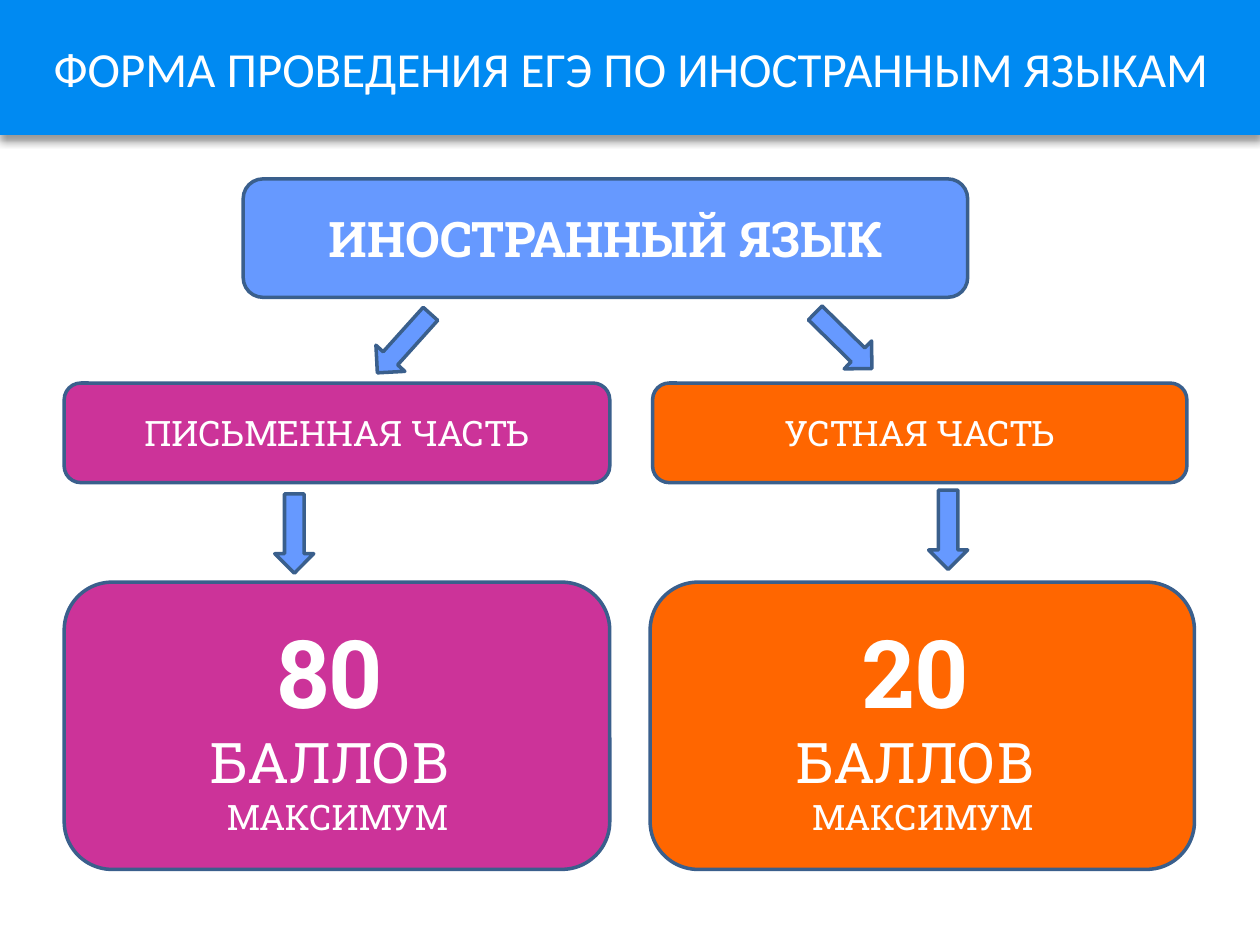
from lxml.etree import SubElement
from pptx import Presentation
from pptx.dml.color import RGBColor
from pptx.enum.shapes import MSO_SHAPE as Shape
from pptx.enum.text import MSO_ANCHOR as Anchor, MSO_AUTO_SIZE as AutoSize, PP_ALIGN as Align
from pptx.oxml.ns import qn
from pptx.util import Inches, Pt

THEME = {
    "banner": "008AF2", "blue": "6699FF", "pink": "CC3399", "orange": "FF6600",
    "outline": "3A5F8C", "text": "FFFFFF", "shadow": "000000",
    "title_font": "Calibri", "body_font": "Roboto Slab",
    "heading": 28, "label": 20, "score": 54, "unit": 32, "line_width": 2,
}

TITLE = "ФОРМА ПРОВЕДЕНИЯ ЕГЭ ПО ИНОСТРАННЫМ ЯЗЫКАМ"
SUBJECT = "ИНОСТРАННЫЙ ЯЗЫК"
# Each part: name, points, colour, (left, width) of its label and of its score box
PARTS = [
    ("ПИСЬМЕННАЯ ЧАСТЬ", "80", "pink", (0.51, 4.33), (0.51, 4.33)),
    ("УСТНАЯ ЧАСТЬ", "20", "orange", (5.18, 4.24), (5.16, 4.32)),
]
LABEL_ROW = (3.04, 0.79)  # top, height
SCORE_ROW = (4.62, 2.28)
ARROW_SIZE = (0.63, 0.31)
# Arrows: left, top, rotation
ARROWS = [(6.38, 2.55, 44.5), (7.21, 4.05, 90), (2.02, 4.08, 90), (2.89, 2.57, 132)]


def color(name):
    return RGBColor.from_string(THEME[name])


def place(shape, left, top, width, height):
    shape.left, shape.top = Inches(left), Inches(top)
    shape.width, shape.height = Inches(width), Inches(height)


def add_run(paragraph, text, *, size="label", font="body_font", bold=False):
    run = paragraph.add_run()
    run.text = text
    run.font.name = THEME[font]
    run.font.size = Pt(THEME[size])
    run.font.bold = bold
    run.font.color.rgb = color("text")


def write(shape, lines, **text_format):
    """Write lines, each a list of (text, format) runs, centred in the shape."""
    frame = shape.text_frame
    frame.word_wrap = True
    frame.auto_size = AutoSize.NONE
    frame.vertical_anchor = Anchor.MIDDLE
    for index, runs in enumerate(lines):
        paragraph = frame.add_paragraph() if index else frame.paragraphs[0]
        paragraph.alignment = Align.CENTER
        for text, run_format in runs:
            add_run(paragraph, text, **{**text_format, **run_format})


def add_filled(slide, kind, fill, left, top, width, height):
    shape = slide.shapes.add_shape(
        kind, Inches(left), Inches(top), Inches(width), Inches(height))
    shape.shadow.inherit = False
    shape.fill.solid()
    shape.fill.fore_color.rgb = color(fill)
    shape.line.color.rgb = color("outline")
    shape.line.width = Pt(THEME["line_width"])
    return shape


def add_drop_shadow(shape):
    effects = SubElement(shape._element.spPr, qn("a:effectLst"))
    shadow = SubElement(effects, qn("a:outerShdw"), blurRad=str(Pt(4)),
                        dist=str(Pt(4)), dir="5400000", rotWithShape="0")
    shade = SubElement(shadow, qn("a:srgbClr"), val=THEME["shadow"])
    SubElement(shade, qn("a:alpha"), val="40000")


def add_banner(slide):
    title = slide.shapes.title
    place(title, 0, 0, 10.01, 1.07)
    title.fill.solid()
    title.fill.fore_color.rgb = color("banner")
    add_drop_shadow(title)
    write(title, [[(TITLE, {})]], size="heading", font="title_font")


def add_part(slide, name, points, fill, label_span, score_span):
    for (left, width), (top, height), lines in (
        (label_span, LABEL_ROW, [[(name, {})]]),
        (score_span, SCORE_ROW, [
            [(points, {"size": "score", "bold": True}), (" ", {"size": "unit"})],
            [("БАЛЛОВ ", {"size": "unit"})],
            [("МАКСИМУМ", {})],
        ]),
    ):
        box = add_filled(slide, Shape.ROUNDED_RECTANGLE, fill, left, top, width, height)
        write(box, lines)


def main():
    presentation = Presentation()
    presentation.slide_width, presentation.slide_height = Inches(10), Inches(7.5)
    slide = presentation.slides.add_slide(presentation.slide_layouts[5])
    add_banner(slide)
    subject = add_filled(slide, Shape.ROUNDED_RECTANGLE, "blue", 1.93, 1.42, 5.75, 0.94)
    write(subject, [[(SUBJECT, {})]], size="heading", bold=True)
    for part in PARTS:
        add_part(slide, *part)
    for left, top, rotation in ARROWS:
        arrow = add_filled(slide, Shape.RIGHT_ARROW, "blue", left, top, *ARROW_SIZE)
        arrow.rotation = rotation
    presentation.save("out.pptx")


if __name__ == "__main__":
    main()
